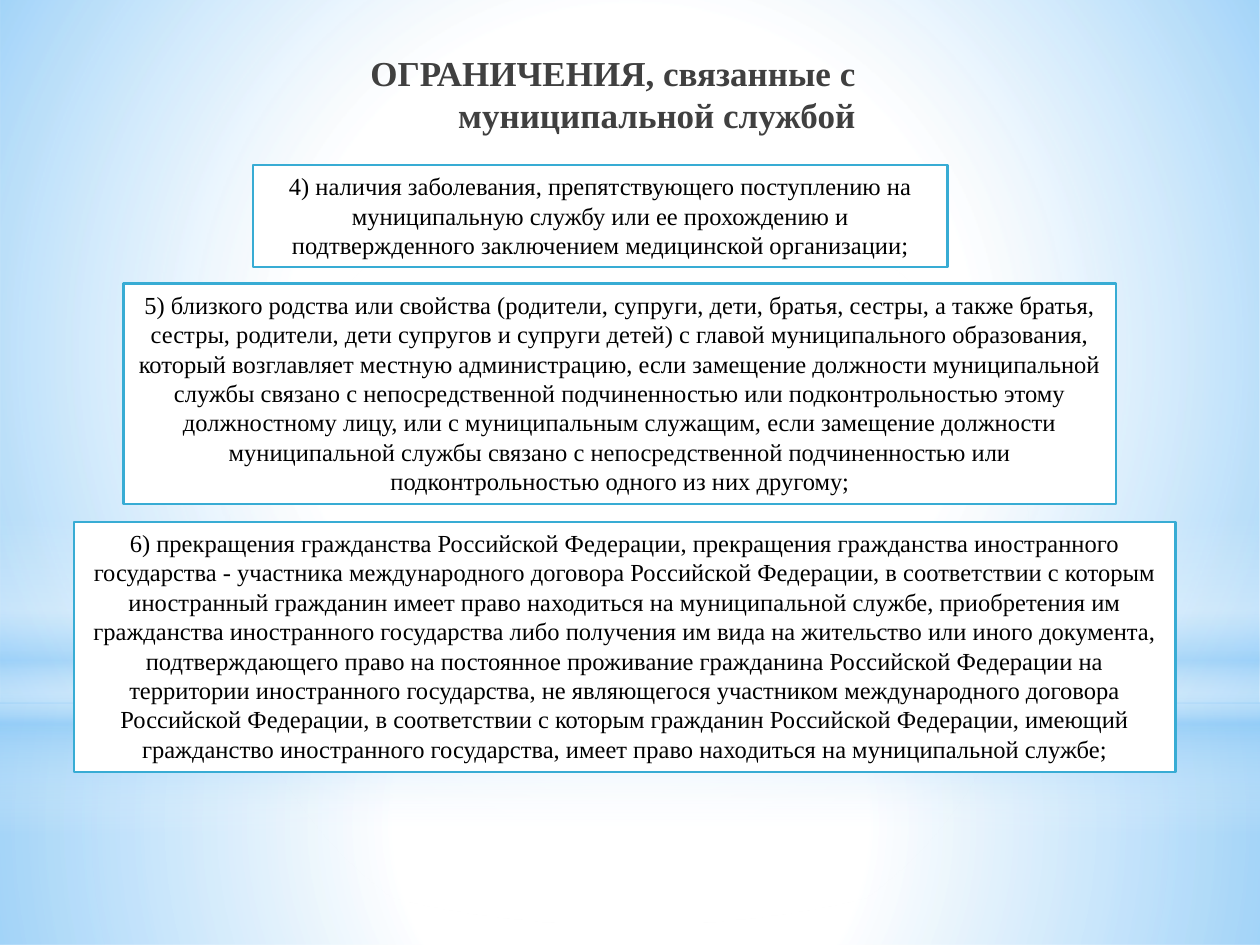
"""Build the slide on restrictions connected with municipal service."""
from dataclasses import dataclass

from lxml import etree
from pptx import Presentation
from pptx.dml.color import RGBColor
from pptx.enum.shapes import MSO_SHAPE
from pptx.enum.text import MSO_ANCHOR, MSO_AUTO_SIZE, PP_ALIGN
from pptx.oxml import parse_xml
from pptx.oxml.ns import nsdecls, qn
from pptx.util import Inches, Pt


@dataclass(frozen=True)
class Theme:
    font: str = "Times New Roman"
    title_size: int = 20
    body_size: int = 14
    title: str = "404040"
    text: str = "000000"
    white: str = "FFFFFF"
    sky: str = "8BC9F7"
    border: str = "38ACD4"


THEME = Theme()
CIRCLE = '<a:path path="circle"><a:fillToRect l="50000" t="50000" r="50000" b="50000"/></a:path>'
LINEAR = '<a:lin ang="5400000" scaled="0"/>'


def write(tf, text, size, color, align, bold=False, anchor=MSO_ANCHOR.TOP, fit=MSO_AUTO_SIZE.NONE):
    tf.word_wrap = True
    tf.auto_size = fit
    tf.vertical_anchor = anchor
    p = tf.paragraphs[0]
    p.alignment = align
    r = p.add_run()
    r.text = text
    r.font.name = THEME.font
    r.font.size = Pt(size)
    r.font.bold = bold
    r.font.color.rgb = RGBColor.from_string(color)
    return p


def fill_gradient(sp, stops, shade):
    marks = "".join(
        f'<a:gs pos="{pos * 1000}"><a:srgbClr val="{color}"><a:alpha val="{alpha * 1000}"/></a:srgbClr></a:gs>'
        for pos, color, alpha in stops
    )
    grad = parse_xml(f'<a:gradFill {nsdecls("a")} rotWithShape="1"><a:gsLst>{marks}</a:gsLst>{shade}</a:gradFill>')
    sp.element.spPr.find(qn("a:prstGeom")).addnext(grad)


prs = Presentation()
prs.slide_width = Inches(10)
prs.slide_height = Inches(7.5)
s = prs.slides.add_slide(prs.slide_layouts[5])
s.background.fill.solid()
s.background.fill.fore_color.rgb = RGBColor.from_string(THEME.white)

W, B = THEME.white, THEME.sky
backdrops = [
    (MSO_SHAPE.RECTANGLE, 5.58, 1.92, [(0, W, 91), (37, W, 76), (100, B, 79)], CIRCLE),
    (MSO_SHAPE.RECTANGLE, 0, 5.58, [(0, W, 89), (48, W, 62), (100, B, 79)], CIRCLE),
    (MSO_SHAPE.RECTANGLE, 4.12, 2.5,
     [(0, W, 0), (29, W, 30), (45, B, 40), (55, W, 26), (65, B, 60), (100, W, 0)], LINEAR),
    (MSO_SHAPE.OVAL, 1.75, 5.58, [(0, W, 100), (56, W, 0)], CIRCLE),
]
for kind, top, height, stops, shade in backdrops:
    sp = s.shapes.add_shape(kind, 0, Inches(top), prs.slide_width, Inches(height))
    sp.shadow.inherit = False
    sp.line.fill.background()
    fill_gradient(sp, stops, shade)

restrictions = [
    (2.01, 1.31, 5.51, 0.81,
     "4) наличия заболевания, препятствующего поступлению на муниципальную службу или ее прохождению "
     "и подтвержденного заключением медицинской организации;"),
    (0.98, 2.25, 7.88, 1.75,
     "5) близкого родства или свойства (родители, супруги, дети, братья, сестры, а также братья, сестры, "
     "родители, дети супругов и супруги детей) с главой муниципального образования, который возглавляет "
     "местную администрацию, если замещение должности муниципальной службы связано с непосредственной "
     "подчиненностью или подконтрольностью этому должностному лицу, или с муниципальным служащим, если "
     "замещение должности муниципальной службы связано с непосредственной подчиненностью или "
     "подконтрольностью одного из них другому;"),
    (0.59, 4.14, 8.74, 1.99,
     "6) прекращения гражданства Российской Федерации, прекращения гражданства иностранного государства - "
     "участника международного договора Российской Федерации, в соответствии с которым иностранный "
     "гражданин имеет право находиться на муниципальной службе, приобретения им гражданства иностранного "
     "государства либо получения им вида на жительство или иного документа, подтверждающего право на "
     "постоянное проживание гражданина Российской Федерации на территории иностранного государства, "
     "не являющегося участником международного договора Российской Федерации, в соответствии с которым "
     "гражданин Российской Федерации, имеющий гражданство иностранного государства, имеет право "
     "находиться на муниципальной службе;"),
]
for left, top, width, height, text in restrictions:
    sp = s.shapes.add_shape(MSO_SHAPE.RECTANGLE, Inches(left), Inches(top), Inches(width), Inches(height))
    sp.shadow.inherit = False
    sp.fill.solid()
    sp.fill.fore_color.rgb = RGBColor.from_string(THEME.white)
    sp.line.color.rgb = RGBColor.from_string(THEME.border)
    sp.line.width = Pt(1.25)
    write(sp.text_frame, text, THEME.body_size, THEME.text, PP_ALIGN.CENTER, fit=MSO_AUTO_SIZE.SHAPE_TO_FIT_TEXT)

title = s.shapes.title
title.left, title.top, title.width, title.height = Inches(2.24), Inches(0.36), Inches(4.65), Inches(0.71)
p = write(title.text_frame, "ОГРАНИЧЕНИЯ, связанные с муниципальной службой",
          THEME.title_size, THEME.title, PP_ALIGN.RIGHT, bold=True)
pPr = p.runs[0].font._element.getparent().getparent().get_or_add_pPr()
pPr.set("marL", str(Inches(0.35)))
pPr.set("indent", str(Inches(-0.35)))
title.element.getparent().append(title.element)

prs.save("out.pptx")
